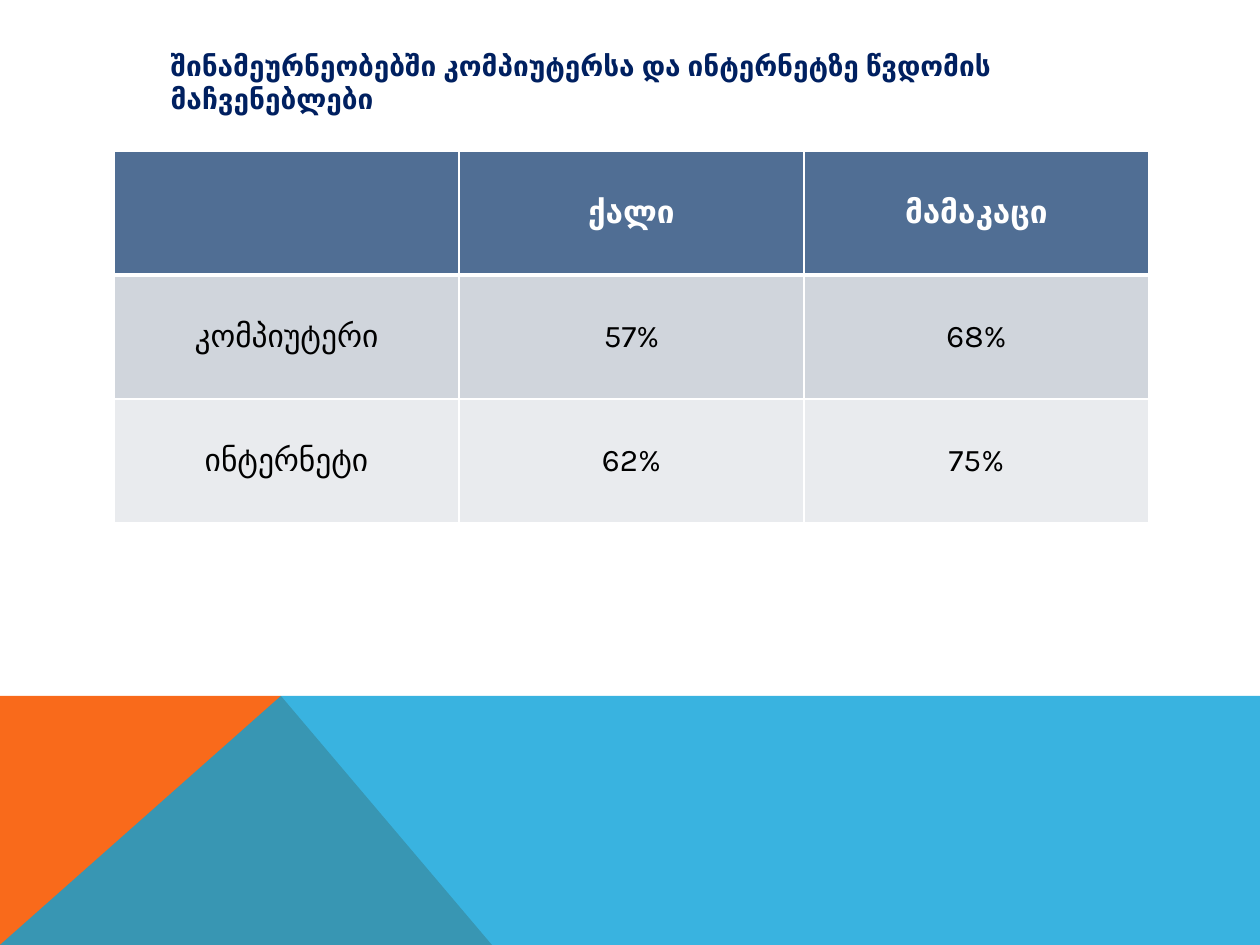
"""Build a slide on household access to computers and the internet."""
from lxml import etree
from pptx import Presentation, util as u
from pptx.dml.color import RGBColor
from pptx.enum import text as t
from pptx.oxml import ns

HEAD = "შინამეურნეობებში კომპიუტერსა და ინტერნეტზე წვდომის მაჩვენებლები"
ROWS = [
    ("", "ქალი", "მამაკაცი"),
    ("კომპიუტერი", "57%", "68%"),
    ("ინტერნეტი", "62%", "75%"),
]
BANDS = [
    ("orange", 100, [(0, 945), (0, 696), (281, 696), (492, 945)]),
    ("blue", 80, [(0, 945), (281, 696), (1260, 696), (1260, 945)]),
]
THEME = {
    "font": "Karla", "title": 16, "cell": 18,
    "navy": "002060", "orange": "F96A1B", "blue": "08A1D9",
    "white": "FFFFFF", "black": "000000",
    "fills": ("506E94", "D0D5DC", "E9EBEE"),
}
SCALE = 914400 / 126
LEFT, TOP, COL, ROW = 114, 151, 345, 124


def px(n):
    return u.Emu(round(n * SCALE))


def rgb(name):
    return RGBColor.from_string(THEME.get(name, name))


def apply(item, form):
    for key, val in form.items():
        setattr(item, key, val)


def write(frame, words, size, color, bold, align):
    para = frame.paragraphs[0]
    para.alignment = align
    run = para.add_run()
    run.text = words
    apply(run.font, {"name": THEME["font"], "size": u.Pt(THEME[size]), "bold": bold})
    run.font.color.rgb = rgb(color)


def band(slide, color, alpha, points):
    build = slide.shapes.build_freeform(*points[0], scale=SCALE)
    build.add_line_segments(points[1:], close=True)
    shape = build.convert_to_shape()
    shape.shadow.inherit = False
    shape.line.fill.background()
    shape.fill.solid()
    shape.fill.fore_color.rgb = rgb(color)
    if alpha < 100:
        tint = shape.fill._xPr.find(".//" + ns.qn("a:srgbClr"))
        etree.SubElement(tint, ns.qn("a:alpha"), val=str(alpha * 1000))


def border(cell, row):
    props = cell._tc.get_or_add_tcPr()
    thick = {"T": 3 if row == 1 else 1, "B": 3 if row == 0 else 1}
    for spot, side in enumerate("LRTB"):
        line = etree.Element(ns.qn("a:ln" + side), w=str(u.Pt(thick.get(side, 1))))
        fill = etree.SubElement(line, ns.qn("a:solidFill"))
        etree.SubElement(fill, ns.qn("a:srgbClr"), val=THEME["white"])
        props.insert(spot, line)


def grid(slide):
    count = len(ROWS[0])
    size = px(COL * count), px(ROW * len(ROWS))
    table = slide.shapes.add_table(len(ROWS), count, px(LEFT), px(TOP), *size).table
    for r, row in enumerate(ROWS):
        for c, words in enumerate(row):
            cell = table.cell(r, c)
            cell.vertical_anchor = t.MSO_ANCHOR.MIDDLE
            cell.fill.solid()
            cell.fill.fore_color.rgb = rgb(THEME["fills"][r])
            border(cell, r)
            if words:
                color = "black" if r else "white"
                write(cell.text_frame, words, "cell", color, r == 0, t.PP_ALIGN.CENTER)


def main():
    deck = Presentation()
    apply(deck, {"slide_width": px(1260), "slide_height": px(945)})
    slide = deck.slides.add_slide(deck.slide_layouts[5])
    for item in BANDS:
        band(slide, *item)
    grid(slide)
    title = slide.shapes.title
    apply(title, {"left": px(158), "top": px(42), "width": px(1029), "height": px(80)})
    apply(title.text_frame, {
        "word_wrap": True, "auto_size": t.MSO_AUTO_SIZE.NONE,
        "vertical_anchor": t.MSO_ANCHOR.TOP,
    })
    write(title.text_frame, HEAD, "title", "navy", True, t.PP_ALIGN.LEFT)
    deck.save("out.pptx")


if __name__ == "__main__":
    main()
